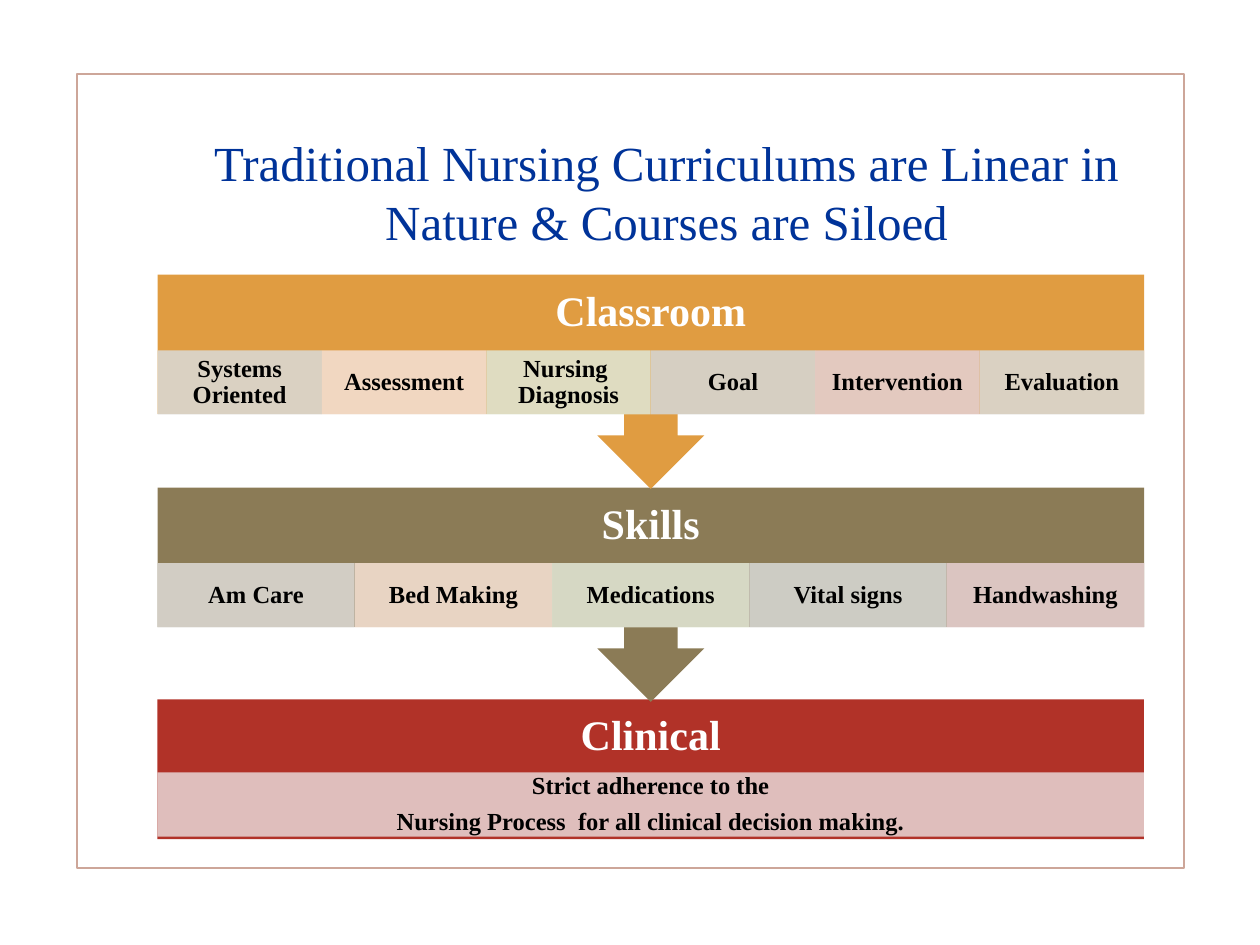
from pptx import Presentation
from pptx.dml.color import RGBColor
from pptx.enum.shapes import MSO_SHAPE
from pptx.enum.text import MSO_ANCHOR, PP_ALIGN
from pptx.oxml.ns import qn
from pptx.util import Inches, Pt
from lxml.etree import SubElement

WHITE = RGBColor(0xFF, 0xFF, 0xFF)
BLACK = RGBColor(0, 0, 0)
NAVY = RGBColor(0x00, 0x33, 0x99)
ROSE = RGBColor(0xCD, 0xA6, 0x99)
ORANGE = RGBColor(0xE0, 0x9C, 0x41)
OLIVE = RGBColor(0x8B, 0x7B, 0x56)
RED = RGBColor(0xB1, 0x32, 0x28)
SAND = RGBColor(0xDA, 0xD7, 0xD1)
PEACH = RGBColor(0xF3, 0xDE, 0xCF)
SAGE = RGBColor(0xDF, 0xE3, 0xD0)
STONE = RGBColor(0xD5, 0xD5, 0xD1)
PINK = RGBColor(0xE4, 0xCE, 0xCD)
TINTS = [SAND, PEACH, SAGE, STONE, PINK, SAND]
LEFT, WIDTH = 1.25, 7.83

HEAD = {"size": Pt(24), "bold": True}
ITEM = {"size": Pt(14), "bold": True}
TITLE = {"size": Pt(28), "bold": False}
TIGHT = {"line_spacing": 0.9, "space_after": Pt(5)}


def style(item, values):
    """Set each named attribute on an object."""
    for name, value in values.items():
        setattr(item, name, value)


def write(shape, lines, font, color, pads, para):
    """Fill a shape with centred lines of text."""
    frame = shape.text_frame
    sides = ("margin_left", "margin_top", "margin_right", "margin_bottom")
    style(frame, dict(zip(sides, map(Inches, pads))))
    style(frame, {"word_wrap": True, "vertical_anchor": MSO_ANCHOR.MIDDLE})
    for row, line in enumerate(lines):
        part = frame.add_paragraph() if row else frame.paragraphs[0]
        part.text = line
        style(part, {"alignment": PP_ALIGN.CENTER, **para})
        style(part.font, {"name": "Times New Roman", **font})
        part.font.color.rgb = color


def block(slide, kind, box, fill):
    """Add a plain filled shape with no outline."""
    shape = slide.shapes.add_shape(kind, *map(Inches, box))
    shape.shadow.inherit = False
    shape.fill.solid()
    shape.fill.fore_color.rgb = fill
    shape.line.fill.background()
    return shape


def border(slide, box):
    """Draw the thin frame round the page."""
    shape = slide.shapes.add_shape(MSO_SHAPE.RECTANGLE, *map(Inches, box))
    shape.shadow.inherit = False
    shape.fill.background()
    shape.line.color.rgb = ROSE
    shape.line.width = Pt(1.25)


def heading(slide, box):
    """Place and format the slide title."""
    title = slide.shapes.title
    style(title, dict(zip(("left", "top", "width", "height"), map(Inches, box))))
    text = "Traditional Nursing Curriculums are Linear in Nature & Courses are Siloed"
    write(title, [text], TITLE, NAVY, (0.1, 0.05, 0.1, 0.05), {})


def stage(slide, box, kind, fill, name, cells, tints, drop):
    """Draw one stage: its body, its name and a row of equal cells."""
    left, top, width, high = box
    body = block(slide, kind, box, fill)
    if kind == MSO_SHAPE.UP_ARROW_CALLOUT:
        body.rotation = 180
    label = slide.shapes.add_textbox(*map(Inches, (left, top, width, 0.6)))
    write(label, [name], HEAD, WHITE, [0.19] * 4, TIGHT)
    step = width / len(cells)
    for col, (lines, tint) in enumerate(zip(cells, tints)):
        spot = (left + col * step, top + drop, step, 0.51)
        cell = block(slide, MSO_SHAPE.RECTANGLE, spot, tint)
        color = cell.fill._xPr.find(qn("a:solidFill"))[0]
        SubElement(color, qn("a:alpha"), val="90000")
        write(cell, lines, ITEM, BLACK, (0.11, 0.02, 0.11, 0.02), TIGHT)


def main():
    """Build the slide and save it."""
    deck = Presentation()
    deck.slide_width, deck.slide_height = Inches(10), Inches(7.5)
    slide = deck.slides.add_slide(deck.slide_layouts[5])
    border(slide, (0.61, 0.59, 8.79, 6.3))
    heading(slide, (1.5, 1, 7.58, 1.04))
    arrow = MSO_SHAPE.UP_ARROW_CALLOUT
    rules = [["Strict adherence to the"],
             ["Nursing Process  for all clinical decision making."]]
    stage(slide, (LEFT, 5.55, WIDTH, 1.11), MSO_SHAPE.RECTANGLE, RED,
          "Clinical", [sum(rules, [])], [PINK], 0.58)
    skills = ["Am Care", "Bed Making", "Medications", "Vital signs", "Handwashing"]
    stage(slide, (LEFT, 3.87, WIDTH, 1.7), arrow, OLIVE,
          "Skills", [[text] for text in skills], TINTS, 0.6)
    topics = ["Systems Oriented", "Assessment", "Nursing  Diagnosis",
              "Goal", "Intervention", "Evaluation"]
    stage(slide, (LEFT, 2.18, WIDTH, 1.7), arrow, ORANGE,
          "Classroom", [[text] for text in topics], TINTS, 0.6)
    deck.save("out.pptx")


if __name__ == "__main__":
    main()
